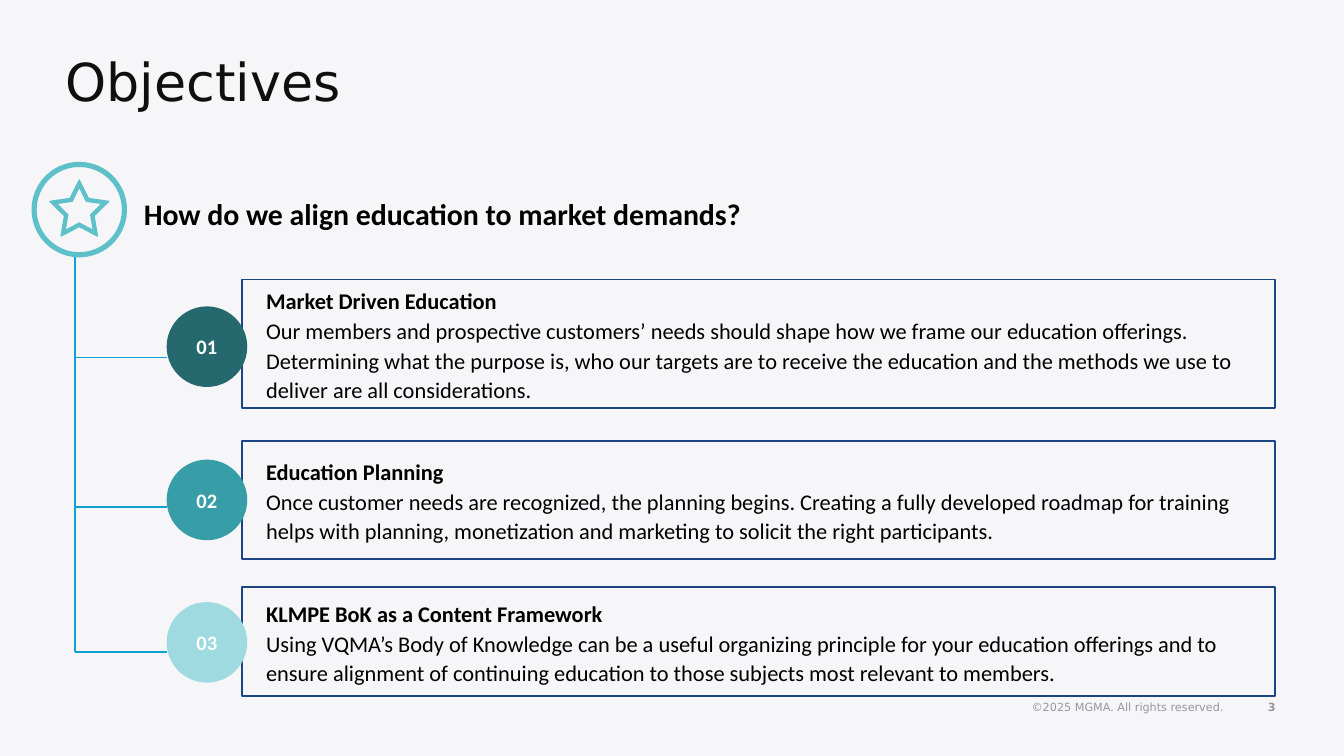
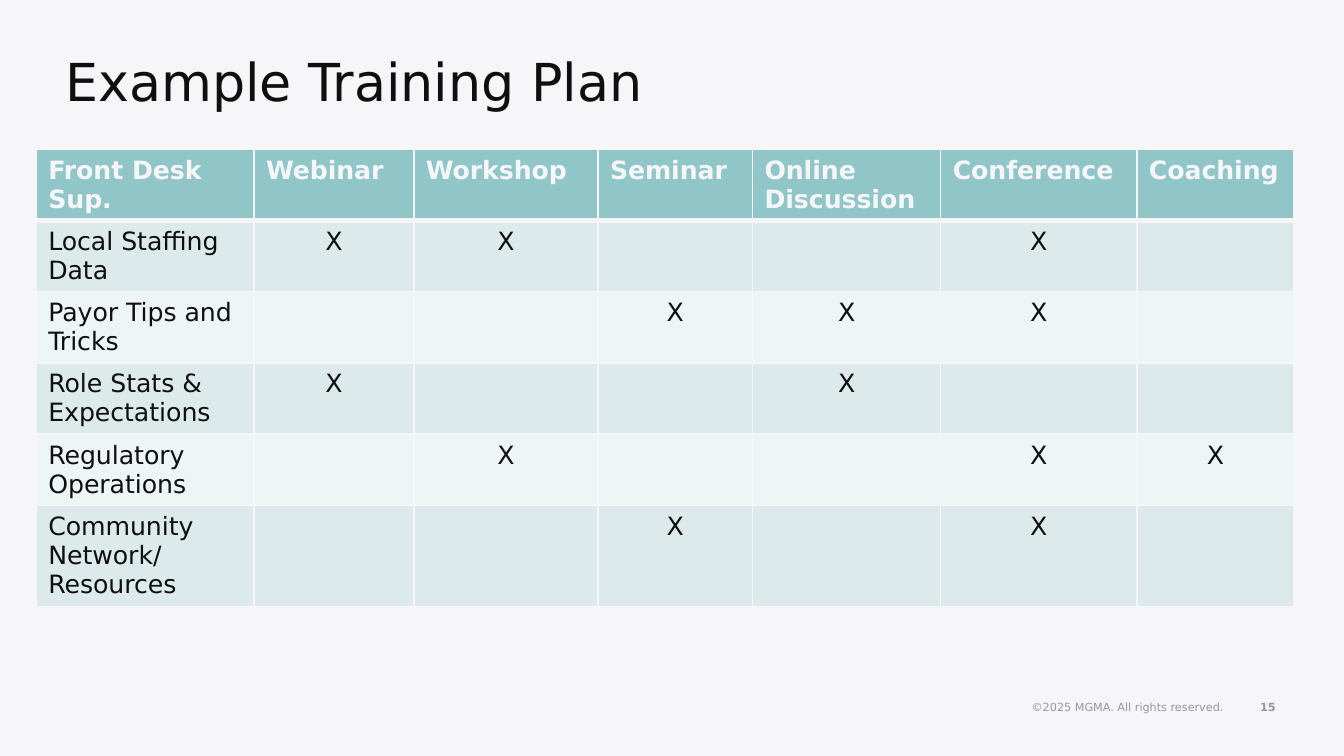
from math import cos, pi, sin

from lxml.etree import SubElement
from pptx import Presentation
from pptx.dml.color import RGBColor
from pptx.enum.shapes import MSO_CONNECTOR, MSO_SHAPE
from pptx.enum.text import MSO_ANCHOR, MSO_AUTO_SIZE, PP_ALIGN
from pptx.oxml.ns import qn
from pptx.util import Inches, Pt

BACK, INK, BLACK, WHITE, GREY = "F6F6F8", "0F0F0F", "000000", "FFFFFF", "98989C"
NAVY, BLUE, TEAL = "1C4586", "11A0D3", "5EC1CA"
HEADER, BANDS = "91C6C9", ("DCEAEB", "EEF5F5")
SANS, BODY = "DejaVu Sans", "Calibri"
COPYRIGHT = "©2025 MGMA. All rights reserved."

TRUNK_X = 0.56
OBJECTIVES = [
    ("01", "25696F", 2.08, 0.96, 2.28, 2.66, "Market Driven Education",
     "Our members and prospective customers’ needs should shape how we frame our "
     "education offerings. Determining what the purpose is, who our targets are to "
     "receive the education and the methods we use to deliver are all considerations."),
    ("02", "379EA7", 3.28, 0.88, 3.42, 3.77, "Education Planning",
     "Once customer needs are recognized, the planning begins. Creating a fully "
     "developed roadmap for training helps with planning, monetization and marketing "
     "to solicit the right participants."),
    ("03", "9EDADF", 4.37, 0.81, 4.48, 4.85, "KLMPE BoK as a Content Framework",
     "Using VQMA’s Body of Knowledge can be a useful organizing principle for your "
     "education offerings and to ensure alignment of continuing education to those "
     "subjects most relevant to members."),
]

COLUMNS = [("Front Desk Sup.", 1.62), ("Webinar", 1.19), ("Workshop", 1.37),
           ("Seminar", 1.15), ("Online Discussion", 1.4), ("Conference", 1.46),
           ("Coaching", 1.17)]
PLAN = [
    ("Local Staffing Data", {"Webinar", "Workshop", "Conference"}),
    ("Payor Tips and Tricks", {"Seminar", "Online Discussion", "Conference"}),
    ("Role Stats & Expectations", {"Webinar", "Online Discussion"}),
    ("Regulatory Operations", {"Workshop", "Conference", "Coaching"}),
    ("Community Network/ Resources", {"Seminar", "Conference"}),
]


def rgb(value):
    return RGBColor.from_string(value)


def write(tf, *lines, size, color, font=BODY, bold=False, align=None,
          spacing=None, anchor=None, insets=None):
    tf.word_wrap = True
    if anchor is not None:
        tf.vertical_anchor = anchor
    if insets:
        (tf.margin_left, tf.margin_top,
         tf.margin_right, tf.margin_bottom) = map(Inches, insets)
    for i, text in enumerate(lines):
        p = tf.add_paragraph() if i else tf.paragraphs[0]
        p.alignment = align
        p.line_spacing = spacing
        r = p.add_run()
        r.text = text
        r.font.name = font
        r.font.size = Pt(size)
        r.font.bold = bold and i == 0
        r.font.color.rgb = rgb(color)


def add_text(s, text, x, y, w, h, **fmt):
    sp = s.shapes.add_textbox(Inches(x), Inches(y), Inches(w), Inches(h))
    write(sp.text_frame, text, **fmt)
    return sp


def style(sp, fill=None, line=None, width=1):
    sp.shadow.inherit = False
    if fill:
        sp.fill.solid()
        sp.fill.fore_color.rgb = rgb(fill)
    else:
        sp.fill.background()
    if line:
        sp.line.color.rgb = rgb(line)
        sp.line.width = Pt(width)
    else:
        sp.line.fill.background()


def add_preset(s, kind, x, y, w, h, **look):
    sp = s.shapes.add_shape(kind, Inches(x), Inches(y), Inches(w), Inches(h))
    style(sp, **look)
    return sp


def add_line(s, x1, y1, x2, y2):
    line = s.shapes.add_connector(MSO_CONNECTOR.STRAIGHT, Inches(x1), Inches(y1),
                                  Inches(x2), Inches(y2))
    line.line.color.rgb = rgb(BLUE)
    line.line.width = Pt(1)
    SubElement(line._element.spPr, qn("a:effectLst"))


def star_points(cx, cy, radius):
    points = []
    for i in range(10):
        r = radius / 2 if i % 2 else radius
        a = i * pi / 5
        points.append((Inches(cx + r * sin(a)), Inches(cy - r * cos(a))))
    return points


def add_star_badge(s):
    cx, cy = 0.59, 1.56
    rim = star_points(cx, cy + 0.01, 0.23)
    hole = star_points(cx, cy + 0.01, 0.18)[::-1]
    fb = s.shapes.build_freeform(*rim[0], scale=1.0)
    fb.add_line_segments(rim[1:], close=True)
    fb.move_to(*hole[0])
    fb.add_line_segments(hole[1:], close=True)
    style(fb.convert_to_shape(), fill=TEAL, line=TEAL, width=0.75)
    ring = add_preset(s, MSO_SHAPE.DONUT, cx - 0.35, cy - 0.35, 0.7, 0.7,
                      fill=TEAL, line=TEAL, width=0.75)
    ring.adjustments[0] = 0.04


def add_objective(s, number, color, top, height, circle_top, rung_y, heading, detail):
    box = add_preset(s, MSO_SHAPE.RECTANGLE, 1.8, top, 7.69, height, line=NAVY)
    write(box.text_frame, heading, detail, size=12, color=BLACK, bold=True,
          align=PP_ALIGN.LEFT, spacing=1.1, anchor=MSO_ANCHOR.MIDDLE,
          insets=(0.18, 0.06, 0.08, 0.06))
    circle = add_preset(s, MSO_SHAPE.OVAL, 1.24, circle_top, 0.6, 0.6, fill=color)
    write(circle.text_frame, number, size=11, color=WHITE, bold=True,
          align=PP_ALIGN.CENTER, anchor=MSO_ANCHOR.MIDDLE, insets=(0, 0, 0, 0))
    add_line(s, TRUNK_X, rung_y, 1.24, rung_y)


def set_borders(cell, top, bottom):
    tcPr = cell._tc.get_or_add_tcPr()
    for side, width in (("L", 1), ("R", 1), ("T", top), ("B", bottom)):
        ln = SubElement(tcPr, qn("a:ln" + side), w=str(Pt(width)))
        SubElement(SubElement(ln, qn("a:solidFill")), qn("a:srgbClr"), val=BACK)


def add_plan_table(s):
    names = [name for name, _ in COLUMNS]
    rows = [names] + [[topic] + ["X" if name in formats else "" for name in names[1:]]
                      for topic, formats in PLAN]
    table = s.shapes.add_table(len(rows), len(names), Inches(0.27), Inches(1.11),
                               Inches(9.36), Inches(0.41 * len(rows))).table
    for col, (_, width) in zip(table.columns, COLUMNS):
        col.width = Inches(width)
    for i, row in enumerate(rows):
        table.rows[i].height = Inches(0.41)
        for j, text in enumerate(row):
            cell = table.cell(i, j)
            cell.margin_left = cell.margin_right = Inches(0.09)
            cell.margin_top, cell.margin_bottom = Inches(0.05), Inches(0.03)
            set_borders(cell, 3 if i == 1 else 1, 3 if i == 0 else 1)
            cell.fill.solid()
            cell.fill.fore_color.rgb = rgb(BANDS[(i - 1) % 2] if i else HEADER)
            if text:
                write(cell.text_frame, text, size=13.5, font=SANS, bold=i == 0,
                      color=INK if i else BACK,
                      align=PP_ALIGN.CENTER if i and j else PP_ALIGN.LEFT)


def add_slide(prs, title, number):
    s = prs.slides.add_slide(prs.slide_layouts[6])
    s.background.fill.solid()
    s.background.fill.fore_color.rgb = rgb(BACK)
    footer = dict(size=6, color=GREY, font=SANS, align=PP_ALIGN.RIGHT,
                  anchor=MSO_ANCHOR.MIDDLE)
    add_text(s, COPYRIGHT, 6.41, 5.11, 2.79, 0.3, **footer)
    add_text(s, number, 8.99, 5.11, 0.6, 0.3, bold=True, **footer)
    add_text(s, title, 0.39, 0.37, 6.73, 0.57, size=28, color=INK, font=SANS,
             spacing=0.9)
    return s


def add_objectives_slide(prs):
    s = add_slide(prs, "Objectives", "3")
    add_star_badge(s)
    question = add_text(s, "How do we align education to market demands?",
                        1.07, 1.43, 6.46, 0.28, size=16, color=BLACK, bold=True,
                        spacing=1.1, insets=(0, 0, 0, 0))
    question.text_frame.auto_size = MSO_AUTO_SIZE.SHAPE_TO_FIT_TEXT
    add_line(s, TRUNK_X, 1.91, TRUNK_X, 4.85)
    for objective in OBJECTIVES:
        add_objective(s, *objective)


def main():
    prs = Presentation()
    prs.slide_width = Inches(10)
    prs.slide_height = prs.slide_width * 9 // 16
    add_objectives_slide(prs)
    add_plan_table(add_slide(prs, "Example Training Plan", "15"))
    prs.save("out.pptx")


if __name__ == "__main__":
    main()
